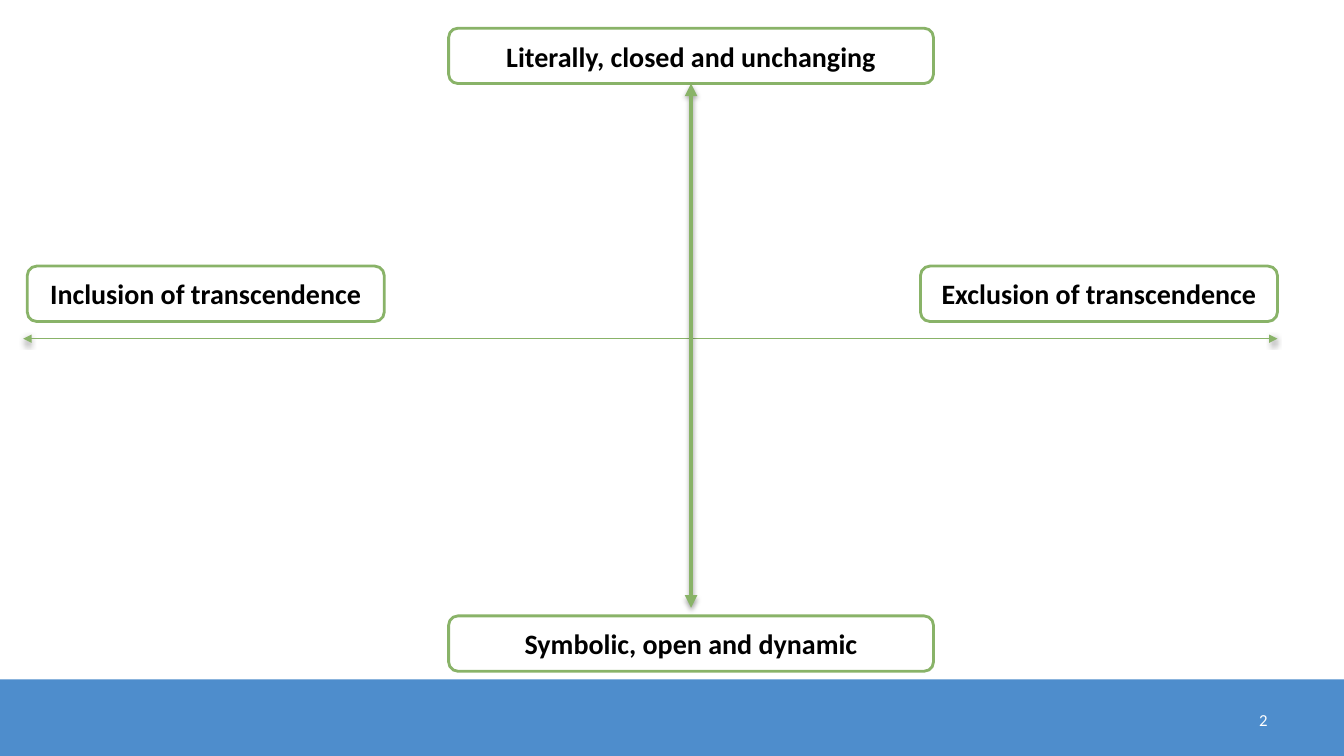
from lxml import etree
from pptx import Presentation
from pptx import util as u
from pptx.dml.color import RGBColor
from pptx.enum import shapes, text
from pptx.oxml.ns import qn

GREEN = RGBColor(0x89, 0xB3, 0x68)
BLUE = RGBColor(0x4E, 0x8D, 0xCC)
WHITE = RGBColor(0xFF, 0xFF, 0xFF)
BLACK = RGBColor(0x00, 0x00, 0x00)

BOX_H = 7.33
SIDE_W, SIDE_Y = 26.56, 35.2
POLE_W, POLE_X, TOP_Y = 36.08, 33.38, 3.73
LEFT, RIGHT = 2.03, 95.05
CENTRE_X = POLE_X + POLE_W / 2


class Slide:
    """Draws styled elements on a slide, placed in percent of its width and height."""

    def __init__(self, prs):
        self.prs = prs
        self.s = prs.slides.add_slide(prs.slide_layouts[6])
        self.font = "Calibri"

    def x(self, share):
        return round(self.prs.slide_width * share / 100)

    def y(self, share):
        return round(self.prs.slide_height * share / 100)

    def area(self, x, y, w, h):
        return self.x(x), self.y(y), self.x(w), self.y(h)

    def label(self, sp, words, size, color, align, bold=False):
        tf = sp.text_frame
        tf.word_wrap = True
        tf.vertical_anchor = text.MSO_ANCHOR.MIDDLE
        p = tf.paragraphs[0]
        p.alignment = align
        r = p.add_run()
        r.text = words
        r.font.name = self.font
        r.font.size = u.Pt(size)
        r.font.bold = bold
        r.font.color.rgb = color

    def band(self, x, y, w, h):
        sp = self.s.shapes.add_shape(shapes.MSO_SHAPE.RECTANGLE, *self.area(x, y, w, h))
        sp.shadow.inherit = False
        sp.fill.solid()
        sp.fill.fore_color.rgb = BLUE
        sp.line.fill.background()

    def number(self, words, x, y, w, h):
        sp = self.s.shapes.add_textbox(*self.area(x, y, w, h))
        self.label(sp, words, 12, WHITE, text.PP_ALIGN.RIGHT)

    def box(self, words, x, y, w):
        sp = self.s.shapes.add_shape(
            shapes.MSO_SHAPE.ROUNDED_RECTANGLE, *self.area(x, y, w, BOX_H))
        sp.adjustments[0] = 0.17
        sp.shadow.inherit = False
        sp.fill.solid()
        sp.fill.fore_color.rgb = WHITE
        sp.line.color.rgb = GREEN
        sp.line.width = u.Pt(2)
        self.label(sp, words, 20, BLACK, text.PP_ALIGN.CENTER, bold=True)
        return sp

    def axis(self, x1, y1, x2, y2, width, opacity, distance):
        cn = self.s.shapes.add_connector(
            shapes.MSO_CONNECTOR.STRAIGHT, self.x(x1), self.y(y1), self.x(x2), self.y(y2))
        cn.line.color.rgb = GREEN
        cn.line.width = u.Pt(width)
        props = cn.element.spPr
        ln = props.find(qn("a:ln"))
        for end in ("a:headEnd", "a:tailEnd"):
            etree.SubElement(ln, qn(end), type="triangle")
        effects = etree.SubElement(props, qn("a:effectLst"))
        shadow = etree.SubElement(
            effects, qn("a:outerShdw"), blurRad=str(int(u.Pt(3.1))),
            dist=str(int(u.Pt(distance))), dir=str(90 * 60000), rotWithShape="0")
        color = etree.SubElement(shadow, qn("a:srgbClr"), val=str(BLACK))
        etree.SubElement(color, qn("a:alpha"), val=str(opacity * 1000))
        return cn


def main():
    prs = Presentation()
    prs.slide_width, prs.slide_height = u.Inches(13.33), u.Inches(7.5)
    slide = Slide(prs)
    slide.band(0, 89.87, 100.45, 10.53)
    slide.number("2", 89.27, 92.53, 5.78, 5.33)
    slide.axis(1.73, 44.8, RIGHT, 44.8, 0.75, 38, 1.6)
    slide.box("Inclusion of transcendence", LEFT, SIDE_Y, SIDE_W)
    slide.box("Exclusion of transcendence", RIGHT - SIDE_W, SIDE_Y, SIDE_W)
    top = slide.box("Literally, closed and unchanging", POLE_X, TOP_Y, POLE_W)
    slide.box("Symbolic, open and dynamic", POLE_X, 81.47, POLE_W)
    vertical = slide.axis(CENTRE_X, TOP_Y + BOX_H, CENTRE_X, 80.4, 3, 35, 1.8)
    vertical.begin_connect(top, 2)
    prs.save("out.pptx")


if __name__ == "__main__":
    main()
